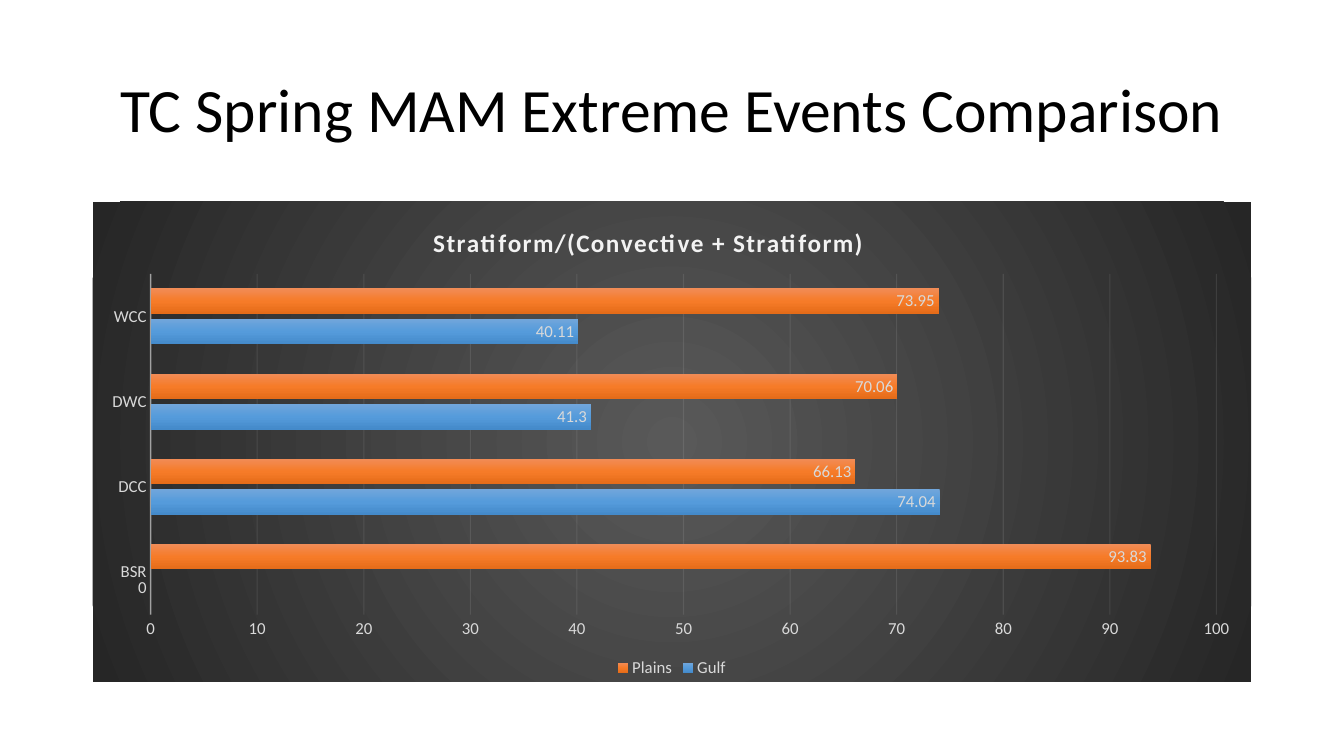
import pptx
import pptx.chart.data
import pptx.dml.color
import pptx.enum.chart
import pptx.enum.text
import pptx.oxml
import pptx.oxml.ns
import pptx.util
from lxml import etree

RGBColor = pptx.dml.color.RGBColor
Pt = pptx.util.Pt
qn = pptx.oxml.ns.qn

FONT = "Calibri"
BLACK = RGBColor(0x00, 0x00, 0x00)
PALE = RGBColor(0xF2, 0xF2, 0xF2)
LABEL_GREY = RGBColor(0xD9, 0xD9, 0xD9)
PANEL = [(0, RGBColor(0x59, 0x59, 0x59)), (100, RGBColor(0x26, 0x26, 0x26))]
BLUES = [(0, RGBColor(0x71, 0xA6, 0xDB)), (50, RGBColor(0x55, 0x9B, 0xDB)),
         (100, RGBColor(0x44, 0x8A, 0xCA))]
ORANGES = [(0, RGBColor(0xF1, 0x8C, 0x57)), (50, RGBColor(0xF6, 0x7B, 0x28)),
           (100, RGBColor(0xE5, 0x6C, 0x19))]

CATEGORIES = ["BSR", "DCC", "DWC", "WCC"]
SERIES = [("Gulf", [0, 74.04, 41.3, 40.11], BLUES),
          ("Plains", [93.83, 66.13, 70.06, 73.95], ORANGES)]

LINEAR = '<a:lin ang="5400000" scaled="0"/>'
RADIAL = ('<a:path path="circle"><a:fillToRect l="50000" t="50000" '
          'r="50000" b="50000"/></a:path>')


def gradient(stops, direction):
    """Return a gradient fill element."""
    gs = "".join(f'<a:gs pos="{pos * 1000}"><a:srgbClr val="{color}"/></a:gs>'
                 for pos, color in stops)
    return pptx.oxml.parse_xml(
        f'<a:gradFill {pptx.oxml.ns.nsdecls("a")} rotWithShape="1">'
        f'<a:gsLst>{gs}</a:gsLst>{direction}</a:gradFill>')


def set_font(font, size, color=LABEL_GREY, bold=False):
    font.name, font.size, font.bold = FONT, Pt(size), bold
    font.color.rgb = color


def set_line(fmt, owner, width, opacity):
    """Draw a pale, partly transparent line on a chart part."""
    fmt.line.width = Pt(width)
    fmt.line.color.rgb = PALE
    for clr in owner.xpath("./c:spPr/a:ln//a:srgbClr"):
        etree.SubElement(clr, qn("a:alpha")).set("val", str(opacity * 1000))


def place(parent, index, **shares):
    """Put a manual layout, in shares of the chart, into a chart part."""
    for old in parent.findall(qn("c:layout")):
        parent.remove(old)
    layout = etree.Element(qn("c:layout"))
    manual = etree.SubElement(layout, qn("c:manualLayout"))
    if "w" in shares:
        etree.SubElement(manual, qn("c:layoutTarget")).set("val", "inner")
    for side in "xy":
        etree.SubElement(manual, qn(f"c:{side}Mode")).set("val", "edge")
    for name, share in shares.items():
        etree.SubElement(manual, qn(f"c:{name}")).set("val", str(share))
    parent.insert(index, layout)


def add_title(slide, box):
    sp = slide.shapes.title
    sp.left, sp.top, sp.width, sp.height = box
    tf = sp.text_frame
    tf.text = "TC Spring MAM Extreme Events Comparison"
    tf.vertical_anchor = pptx.enum.text.MSO_ANCHOR.MIDDLE
    p = tf.paragraphs[0]
    p.alignment = pptx.enum.text.PP_ALIGN.CENTER
    p.line_spacing = 0.9
    set_font(p.runs[0].font, 44, BLACK)


def add_bar_chart(slide, box):
    data = pptx.chart.data.CategoryChartData()
    data.categories = CATEGORIES
    for name, values, _ in SERIES:
        data.add_series(name, values)
    chart = slide.shapes.add_chart(
        pptx.enum.chart.XL_CHART_TYPE.BAR_CLUSTERED, *box, data).chart
    set_font(chart.font, 10, BLACK)

    # Dark panel
    panel = etree.Element(qn("c:spPr"))
    panel.append(gradient(PANEL, RADIAL))
    chart._chartSpace.chart.addnext(panel)

    # Chart title
    chart.has_title = True
    title = chart.chart_title
    title.text_frame.text = "Stratiform/(Convective + Stratiform)"
    r = title.text_frame.paragraphs[0].runs[0]
    set_font(r.font, 18, PALE, bold=True)
    r.font._element.set("spc", "100")
    title.include_in_layout = False
    place(title._element, 1, x=0.29, y=0.04)

    # Bars and their values
    plot = chart.plots[0]
    plot.gap_width, plot.overlap, plot.vary_by_categories = 115, -20, False
    for series, (_, _, stops) in zip(plot.series, SERIES):
        series._element.get_or_add_spPr().insert(0, gradient(stops, LINEAR))
        labels = series.data_labels
        labels.show_value = True
        labels.position = pptx.enum.chart.XL_LABEL_POSITION.INSIDE_END
        set_font(labels.font, 12)
    place(chart._chartSpace.chart.plotArea, 0, x=0.05, y=0.15, w=0.92, h=0.71)

    # Axes
    no_tick = pptx.enum.chart.XL_TICK_MARK.NONE
    cat, val = chart.category_axis, chart.value_axis
    for axis in (cat, val):
        axis.major_tick_mark = axis.minor_tick_mark = no_tick
        set_font(axis.tick_labels.font, 12)
    set_line(cat.format, cat._element, 1, 54)
    val.format.line.fill.background()
    val.minimum_scale, val.maximum_scale, val.major_unit = 0, 100, 10
    val.has_major_gridlines = True
    grid = val.major_gridlines.format
    set_line(grid, val._element.find(qn("c:majorGridlines")), 0.75, 10)

    # Legend
    chart.has_legend = True
    chart.legend.position = pptx.enum.chart.XL_LEGEND_POSITION.BOTTOM
    chart.legend.include_in_layout = False
    set_font(chart.legend.font, 12)


def main():
    prs = pptx.Presentation()
    prs.slide_width = pptx.util.Inches(13.33)
    prs.slide_height = pptx.util.Inches(7.5)
    slide = prs.slides.add_slide(prs.slide_layouts[5])

    # Both regions share one column, as shares of the slide
    width, height = prs.slide_width, prs.slide_height
    left = round(width * 0.069)
    column = width - 2 * left

    def band(top, depth):
        return left, round(height * top), column, round(height * depth)

    add_title(slide, band(0.053, 0.193))
    add_bar_chart(slide, band(0.267, 0.635))
    prs.save("out.pptx")


if __name__ == "__main__":
    main()
